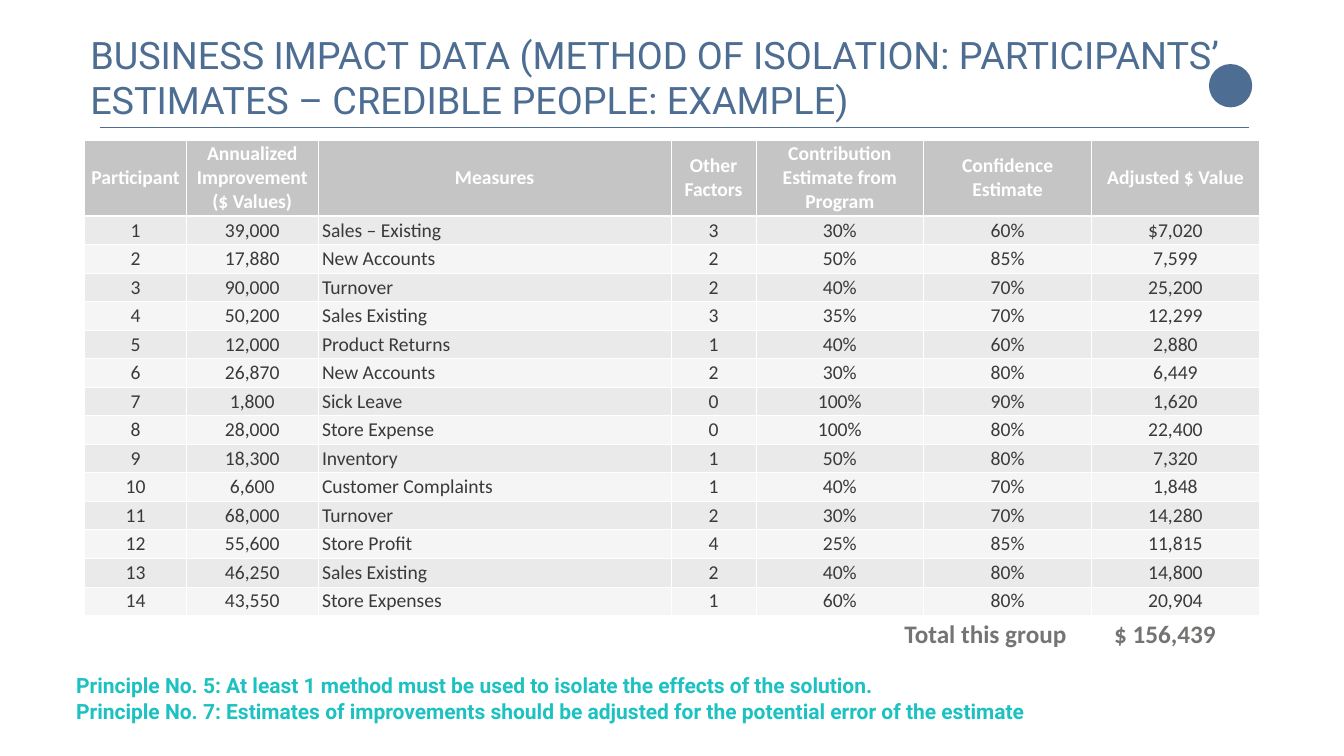
import pptx
import pptx.util
import pptx.dml.color
import pptx.enum.shapes
import pptx.enum.text
import pptx.oxml
from lxml import etree

Pt, Inches = pptx.util.Pt, pptx.util.Inches
ALIGN, ANCHOR = pptx.enum.text.PP_ALIGN, pptx.enum.text.MSO_ANCHOR
NS = "http://schemas.openxmlformats.org/drawingml/2006/main"
SLIDE_W, SLIDE_H = Inches(26.67), Inches(15)
BLUE, WHITE, HEADER_GRAY, TEXT_GRAY = "4D6D92", "FFFFFF", "C5C5C5", "3A3A39"
BANDS = ["EAEAEA", "F5F5F5"]
TOTAL_GRAY, TEAL = "737572", "1DC1C1"

COLUMNS = [("Participant", 2.02), ("Annualized Improvement ($ Values)", 2.61),
           ("Measures", 7.01), ("Other Factors", 1.68),
           ("Contribution Estimate from Program", 3.33),
           ("Confidence Estimate", 3.33), ("Adjusted $ Value", 3.33)]
MEASURES_COL = 2
HEADER_SHARE = 0.16
ESTIMATES = [
    ("39,000", "Sales – Existing", 3, "30%", "60%", "$7,020"),
    ("17,880", "New Accounts", 2, "50%", "85%", "7,599"),
    ("90,000", "Turnover", 2, "40%", "70%", "25,200"),
    ("50,200", "Sales Existing", 3, "35%", "70%", "12,299"),
    ("12,000", "Product Returns", 1, "40%", "60%", "2,880"),
    ("26,870", "New Accounts", 2, "30%", "80%", "6,449"),
    ("1,800", "Sick Leave", 0, "100%", "90%", "1,620"),
    ("28,000", "Store Expense", 0, "100%", "80%", "22,400"),
    ("18,300", "Inventory", 1, "50%", "80%", "7,320"),
    ("6,600", "Customer Complaints", 1, "40%", "70%", "1,848"),
    ("68,000", "Turnover", 2, "30%", "70%", "14,280"),
    ("55,600", "Store Profit", 4, "25%", "85%", "11,815"),
    ("46,250", "Sales Existing", 2, "40%", "80%", "14,800"),
    ("43,550", "Store Expenses", 1, "60%", "80%", "20,904"),
]
PRINCIPLES = [
    "Principle No. 5: At least 1 method must be used to isolate the effects of the solution.",
    "Principle No. 7: Estimates of improvements should be adjusted for the potential error of the estimate",
]


def box(x, y, w, h):
    """Turn percentages of the slide into left, top, width, height."""
    return (int(SLIDE_W * x / 100), int(SLIDE_H * y / 100),
            int(SLIDE_W * w / 100), int(SLIDE_H * h / 100))


def rgb(color):
    return pptx.dml.color.RGBColor.from_string(color)


def style(p, name, size, color, bold=False, align=ALIGN.LEFT):
    p.alignment = align
    f = p.font
    f.name, f.size, f.bold = name, Pt(size), bold
    f.color.rgb = rgb(color)


def add_title(s, area):
    sp = s.shapes.title
    sp.left, sp.top, sp.width, sp.height = area
    tf = sp.text_frame
    tf.text = ("BUSINESS IMPACT DATA (METHOD OF ISOLATION: PARTICIPANTS’ "
               "ESTIMATES – CREDIBLE PEOPLE: EXAMPLE)")
    tf.word_wrap = True
    tf.auto_size = pptx.enum.text.MSO_AUTO_SIZE.NONE
    tf.vertical_anchor = ANCHOR.TOP
    style(tf.paragraphs[0], "Roboto", 54, BLUE)


def add_title_decor(s, circle_area, rule_area):
    sp = s.shapes.add_shape(pptx.enum.shapes.MSO_SHAPE.OVAL, *circle_area)
    sp.shadow.inherit = False
    sp.fill.solid()
    sp.fill.fore_color.rgb = rgb(BLUE)
    sp.line.fill.background()
    x, y, w, h = rule_area
    rule = s.shapes.add_connector(pptx.enum.shapes.MSO_CONNECTOR.STRAIGHT,
                                  x, y, x + w, y + h)
    rule.line.color.rgb = rgb(BLUE)
    rule.line.width = Pt(2.25)
    etree.SubElement(rule.element.spPr, f"{{{NS}}}effectLst")


def add_borders(cell, bottom, top):
    tcPr = cell._tc.get_or_add_tcPr()
    for side, width in (("L", 1), ("R", 1), ("T", top), ("B", bottom)):
        tcPr.append(pptx.oxml.parse_xml(
            f'<a:ln{side} xmlns:a="{NS}" w="{Pt(width)}"><a:solidFill>'
            f'<a:srgbClr val="{WHITE}"/></a:solidFill></a:ln{side}>'))


def fill_cell(cell, text, r, c):
    header = r == 0
    add_borders(cell, bottom=3 if header else 1, top=3 if r == 1 else 1)
    cell.fill.solid()
    cell.fill.fore_color.rgb = rgb(HEADER_GRAY if header else BANDS[(r - 1) % 2])
    cell.margin_left = cell.margin_right = Inches(0.08)
    cell.margin_top = cell.margin_bottom = Inches(0.03)
    cell.vertical_anchor = ANCHOR.MIDDLE
    cell.text = str(text)
    left = c == MEASURES_COL and not header
    style(cell.text_frame.paragraphs[0], "Calibri", 28,
          WHITE if header else TEXT_GRAY, header,
          ALIGN.LEFT if left else ALIGN.CENTER)


def add_estimates_table(s, area):
    rows = [[name for name, _ in COLUMNS]]
    rows += [(i, *values) for i, values in enumerate(ESTIMATES, 1)]
    table = s.shapes.add_table(len(rows), len(COLUMNS), *area).table
    width, height = area[2:]
    total = sum(weight for _, weight in COLUMNS)
    for col, (_, weight) in zip(table.columns, COLUMNS):
        col.width = int(width * weight / total)
    for r, values in enumerate(rows):
        share = HEADER_SHARE if r == 0 else (1 - HEADER_SHARE) / len(ESTIMATES)
        table.rows[r].height = int(height * share)
        for c, text in enumerate(values):
            fill_cell(table.cell(r, c), text, r, c)


def add_text(s, area, lines, name, size, color):
    tf = s.shapes.add_textbox(*area).text_frame
    tf.word_wrap = True
    for i, line in enumerate(lines):
        p = tf.add_paragraph() if i else tf.paragraphs[0]
        p.text = line
        style(p, name, size, color, bold=True)
    return tf


def add_total(s, area):
    tf = add_text(s, area, ["Total this group\t$ 156,439"], "Calibri", 36, TOTAL_GRAY)
    # The amount starts at a tab stop
    pPr = tf.paragraphs[0]._p.get_or_add_pPr()
    pPr.insert(0, pptx.oxml.parse_xml(
        f'<a:tabLst xmlns:a="{NS}"><a:tab pos="{int(area[2] * 0.65)}" algn="l"/></a:tabLst>'))


def main():
    prs = pptx.Presentation()
    prs.slide_width, prs.slide_height = SLIDE_W, SLIDE_H
    s = prs.slides.add_slide(prs.slide_layouts[5])
    # Heading
    add_title_decor(s, box(89.95, 8.47, 3.22, 5.73), box(7.42, 16.87, 85.53, 0))
    add_title(s, box(6.34, 3.87, 85.56, 12.8))
    # Estimates and their total
    add_estimates_table(s, box(6.3, 18.53, 87.4, 62.87))
    add_total(s, box(66.93, 81.47, 24, 4.73))
    # Principles
    add_text(s, box(5.29, 88.67, 89.43, 7.4), PRINCIPLES, "Roboto", 30, TEAL)
    prs.save("out.pptx")


if __name__ == "__main__":
    main()
